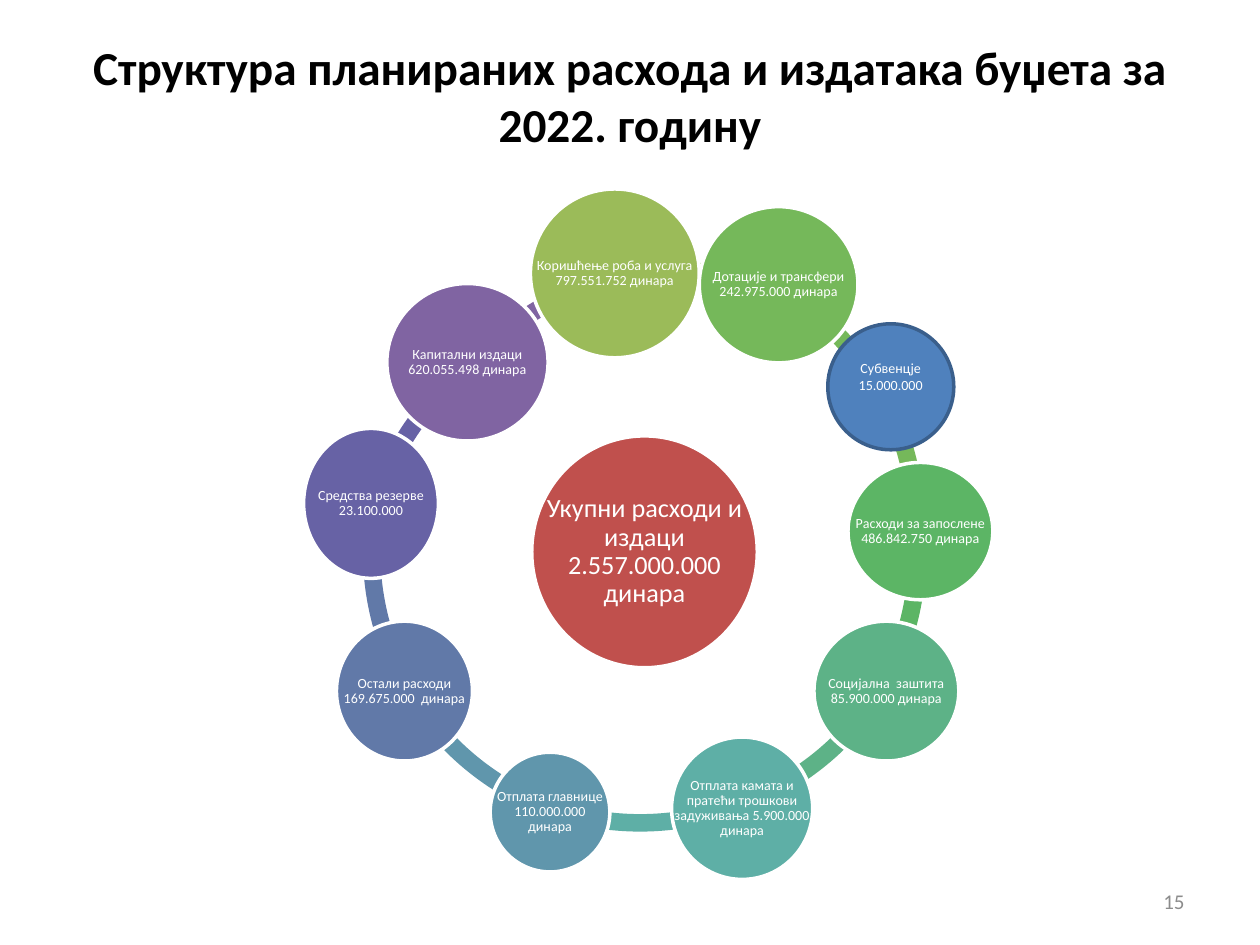
import pptx
import pptx.dml.color
import pptx.enum.shapes
import pptx.enum.text
import pptx.util
from dataclasses import dataclass
from pptx.util import Inches

SHAPES = pptx.enum.shapes.MSO_SHAPE
ALIGN = pptx.enum.text.PP_ALIGN


@dataclass(frozen=True)
class Theme:
    font: str = "Calibri"
    ink: str = "000000"
    muted: str = "8C8C8C"
    white: str = "FFFFFF"
    total: str = "C0504D"
    subsidy: str = "4F81BD"
    subsidy_line: str = "3A5F8C"
    capital: str = "8064A2"
    reserve: str = "6762A5"
    other: str = "6179A8"
    principal: str = "6096AC"
    interest: str = "5EAFA6"
    social: str = "5DB287"
    staff: str = "5CB565"
    grants: str = "75B85A"
    goods: str = "9BBB59"
    title_size: float = 27
    total_size: float = 15
    label_size: float = 8
    number_size: float = 12
    outline: float = 2


THEME = Theme()
ARC_SIZE = 4.48
ARC_THICKNESS = 0.031
ARC_UNIT = 0.6  # one degree, in units of the arc's adjustments

# colour, left, top, start and end angle in degrees
ARCS = [
    (THEME.capital, 3.14, 2.08, 220.95, 257.13),
    (THEME.reserve, 2.82, 2.38, 196.41, 232.13),
    (THEME.other, 2.88, 2.14, 150, 190),
    (THEME.principal, 2.88, 2.14, 110, 150),
    (THEME.interest, 2.84, 2.12, 68.47, 109.01),
    (THEME.social, 2.9, 2.1, 31.02, 70.02),
    (THEME.staff, 2.87, 2.15, 355.36, 29.5),
    (THEME.grants, 2.86, 1.94, 299.2, 0.8),
    (THEME.goods, 3.15, 2.08, 256.78, 291.01),
]

# colour, box, label
EXPENSES = [
    (THEME.goods, (4.21, 1.5, 1.34, 1.34), "Коришћење роба и услуга 797.551.752 динара"),
    (THEME.grants, (5.55, 1.64, 1.26, 1.24), "Дотације и трансфери 242.975.000 динара"),
    (THEME.staff, (6.73, 3.67, 1.15, 1.09), "Расходи за запослене 486.842.750 динара"),
    (THEME.social, (6.46, 4.93, 1.15, 1.11), "Социјална  заштита 85.900.000 динара"),
    (THEME.interest, (5.33, 5.85, 1.12, 1.13),
     "Отплата камата и пратећи трошкови задуживања 5.900.000 динара"),
    (THEME.principal, (3.89, 5.97, 0.95, 0.95), "Отплата главнице 110.000.000 динара"),
    (THEME.other, (2.67, 4.93, 1.08, 1.11), "Остали расходи 169.675.000  динара"),
    (THEME.reserve, (2.41, 3.4, 1.07, 1.19), "Средства резерве 23.100.000"),
    (THEME.capital, (3.07, 2.25, 1.28, 1.25), "Капитални издаци 620.055.498 динара"),
]


def color(value):
    return pptx.dml.color.RGBColor.from_string(value)


def set_format(target, values):
    for name, value in values.items():
        setattr(target, name, value)


def write(shape, text, size, ink=THEME.white, bold=False, align=ALIGN.CENTER,
          spacing=1.0, insets=(0.1, 0.05, 0.1, 0.05)):
    """Set one vertically centred paragraph; insets are left, top, right, bottom."""
    frame = shape.text_frame
    left, top, right, bottom = map(Inches, insets)
    set_format(frame, {
        "word_wrap": True,
        "vertical_anchor": pptx.enum.text.MSO_ANCHOR.MIDDLE,
        "margin_left": left, "margin_top": top,
        "margin_right": right, "margin_bottom": bottom,
    })
    paragraph = frame.paragraphs[0]
    set_format(paragraph, {"alignment": align, "line_spacing": spacing})
    run = paragraph.add_run()
    run.text = text
    set_format(run.font, {"name": THEME.font, "size": pptx.util.Pt(size), "bold": bold})
    run.font.color.rgb = color(ink)


def add_text(slide, box, text, size, **options):
    write(slide.shapes.add_textbox(*map(Inches, box)), text, size, **options)


def add_filled(slide, kind, box, fill, line=None):
    shape = slide.shapes.add_shape(kind, *map(Inches, box))
    shape.shadow.inherit = False
    shape.fill.solid()
    shape.fill.fore_color.rgb = color(fill)
    if line:
        shape.line.color.rgb = color(line)
        shape.line.width = pptx.util.Pt(THEME.outline)
    else:
        shape.line.fill.background()
    return shape


def add_arc(slide, box, fill, start, end):
    arc = add_filled(slide, SHAPES.BLOCK_ARC, box, fill)
    for index, value in enumerate((start * ARC_UNIT, end * ARC_UNIT, ARC_THICKNESS)):
        arc.adjustments[index] = value


def add_circle(slide, box, fill, label, size, inset):
    """Draw a circle whose label may use the full width of its box."""
    add_filled(slide, SHAPES.OVAL, box, fill, THEME.white)
    add_text(slide, box, label, size, spacing=0.9, insets=(inset,) * 4)


def add_ring(slide):
    for fill, left, top, start, end in ARCS:
        add_arc(slide, (left, top, ARC_SIZE, ARC_SIZE), fill, start, end)
    add_circle(slide, (4.22, 3.46, 1.79, 1.84), THEME.total,
               "Укупни расходи и издаци 2.557.000.000 динара", THEME.total_size, 0.02)
    for fill, box, label in EXPENSES:
        add_circle(slide, box, fill, label, THEME.label_size, 0.01)


def add_subsidy(slide, box):
    circle = add_filled(slide, SHAPES.OVAL, box, THEME.subsidy, THEME.subsidy_line)
    write(circle, "Субвенцје 15.000.000", THEME.label_size, insets=(0.1, 0.05, 0.1, 0.21))


def main():
    presentation = pptx.Presentation()
    set_format(presentation, {"slide_width": Inches(10), "slide_height": Inches(7.5)})
    slide = presentation.slides.add_slide(presentation.slide_layouts[6])
    add_text(slide, (0.5, 0.29, 9, 0.93),
             "Структура планираних расхода и издатака буџета за 2022. годину",
             THEME.title_size, ink=THEME.ink, bold=True)
    add_ring(slide)
    add_text(slide, (7.17, 6.95, 2.33, 0.4), "15", THEME.number_size,
             ink=THEME.muted, align=ALIGN.RIGHT)
    add_subsidy(slide, (6.57, 2.57, 1, 1))
    presentation.save("out.pptx")


if __name__ == "__main__":
    main()
